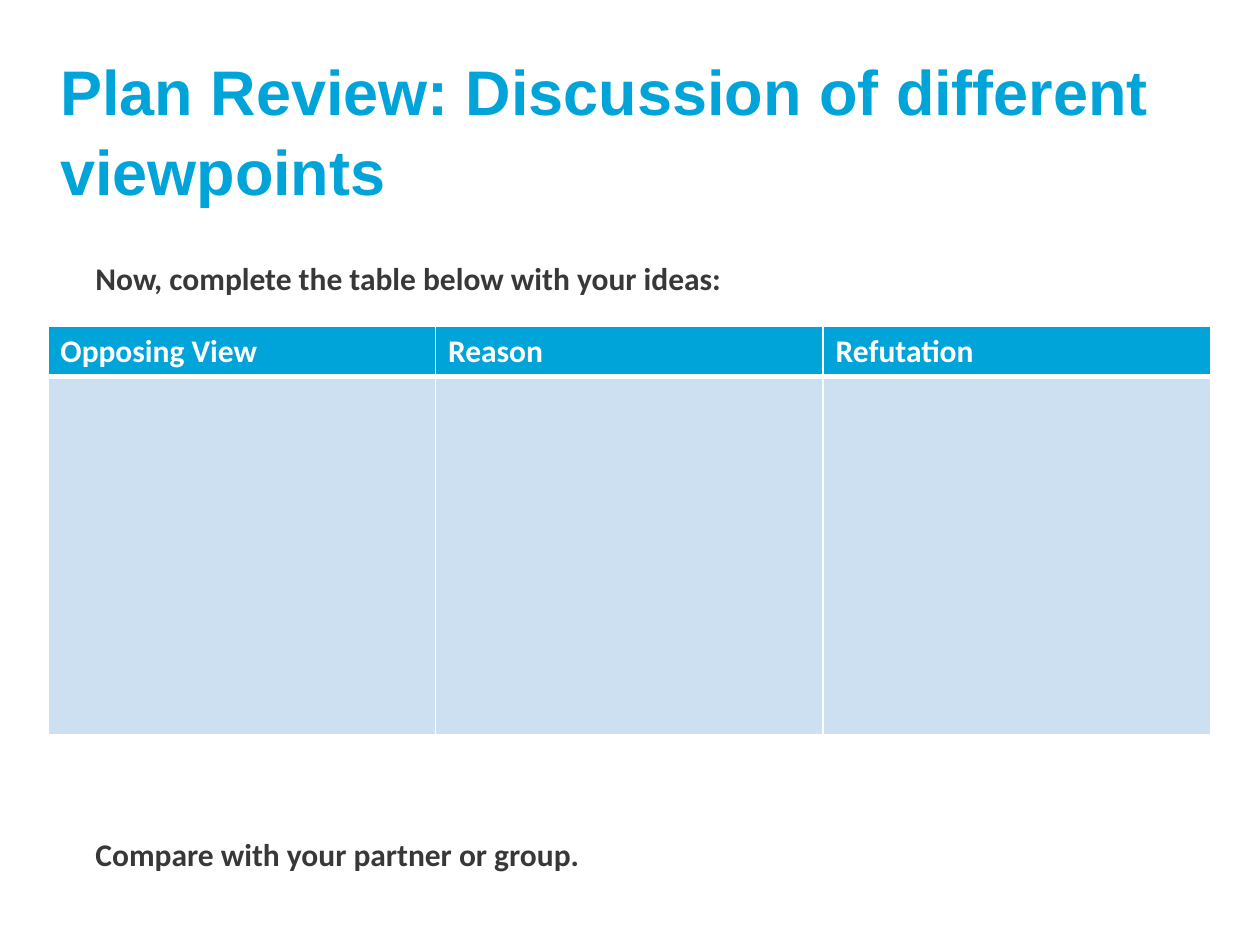
from dataclasses import dataclass

from lxml.etree import SubElement
from pptx import Presentation
from pptx.dml.color import RGBColor
from pptx.enum.text import MSO_ANCHOR
from pptx.oxml.ns import qn
from pptx.util import Inches, Pt


@dataclass(frozen=True)
class Theme:
    accent: str = "00A4D9"
    tint: str = "CCE0F1"
    ink: str = "393839"
    white: str = "FFFFFF"
    heading_font: str = "Arial"
    body_font: str = "Calibri"
    title_size: int = 36
    body_size: int = 18


THEME = Theme()


def add_run(paragraph, text, font_name, size, color):
    run = paragraph.add_run()
    run.text = text
    run.font.name = font_name
    run.font.size = Pt(size)
    run.font.bold = True
    run.font.color.rgb = RGBColor.from_string(color)


def add_title(slide, left, top, width, height, text):
    frame = slide.shapes.add_textbox(left, top, width, height).text_frame
    frame.word_wrap = True
    frame.vertical_anchor = MSO_ANCHOR.MIDDLE
    paragraph = frame.paragraphs[0]
    paragraph.line_spacing = 1.05
    add_run(paragraph, text, THEME.heading_font, THEME.title_size, THEME.accent)


def add_instruction(slide, left, top, width, height, text):
    frame = slide.shapes.add_textbox(left, top, width, height).text_frame
    frame.word_wrap = False
    add_run(frame.paragraphs[0], text, THEME.body_font, THEME.body_size, THEME.ink)


def style_cell(cell, fill, border_widths):
    """Give a cell white borders, keyed by side, and a solid fill."""
    properties = cell._tc.get_or_add_tcPr()
    for side, points in border_widths.items():
        line = SubElement(properties, qn(f"a:{side}"), w=str(Pt(points)))
        solid = SubElement(line, qn("a:solidFill"))
        SubElement(solid, qn("a:srgbClr"), val=THEME.white)
    cell.fill.solid()
    cell.fill.fore_color.rgb = RGBColor.from_string(fill)


def add_viewpoint_table(slide, left, top, width, height, headings):
    header_height = Inches(0.4)
    table = slide.shapes.add_table(2, len(headings), left, top, width, height).table
    table.rows[0].height = header_height
    table.rows[1].height = height - header_height

    for column, heading in enumerate(headings):
        header, answer = table.cell(0, column), table.cell(1, column)
        style_cell(header, THEME.accent, {"lnL": 1, "lnR": 1, "lnT": 1, "lnB": 3})
        style_cell(answer, THEME.tint, {"lnL": 1, "lnR": 1, "lnT": 3, "lnB": 1})
        add_run(header.text_frame.paragraphs[0], heading,
                THEME.body_font, THEME.body_size, THEME.white)


def main():
    presentation = Presentation()
    presentation.slide_width = Inches(10)
    presentation.slide_height = Inches(7.5)
    slide = presentation.slides.add_slide(presentation.slide_layouts[6])

    margin, content_width = Inches(0.38), Inches(9.23)
    indent, line_height = Inches(0.66), Inches(0.4)

    # Title
    add_title(slide, margin, Inches(0.5), content_width, Inches(1.04),
              "Plan Review: Discussion of different viewpoints")

    # Table to fill in
    add_viewpoint_table(slide, margin, Inches(2.59), content_width, Inches(3.24),
                        ["Opposing View", "Reason", "Refutation"])

    # Instructions above and below the table
    add_instruction(slide, indent, Inches(2.01), Inches(5.27), line_height,
                    "Now, complete the table below with your ideas:")
    add_instruction(slide, indent, Inches(6.58), Inches(4.07), line_height,
                    "Compare with your partner or group.")

    presentation.save("out.pptx")


if __name__ == "__main__":
    main()
